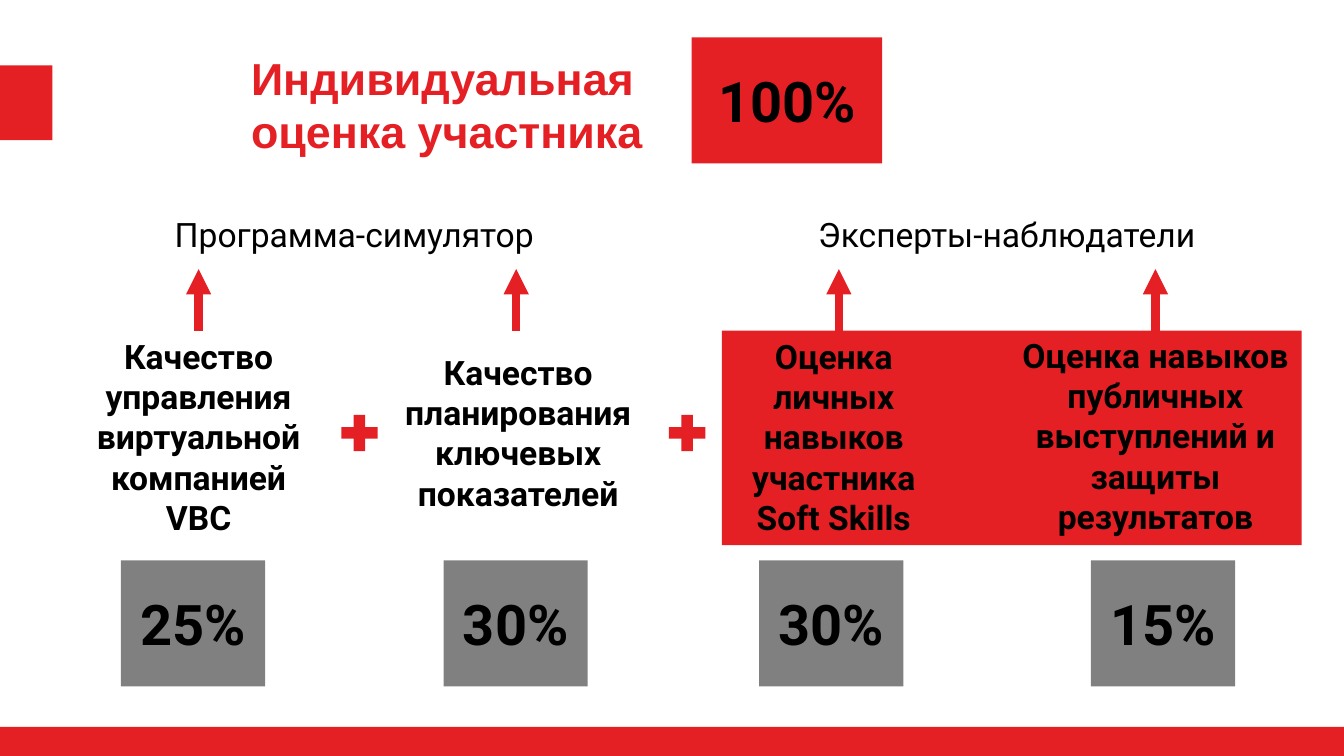
import pptx
import pptx.dml.color
import pptx.enum.shapes
import pptx.enum.text
import pptx.oxml.ns
import pptx.util
from lxml import etree

Inches = pptx.util.Inches
Pt = pptx.util.Pt
Shape = pptx.enum.shapes.MSO_SHAPE
Align = pptx.enum.text.PP_ALIGN

RED = pptx.dml.color.RGBColor(0xE4, 0x20, 0x25)
GRAY = pptx.dml.color.RGBColor(0x80, 0x80, 0x80)
BLACK = pptx.dml.color.RGBColor(0, 0, 0)


class SlideBuilder:
    heading_font = "Arial"
    body_font = "Roboto"

    def __init__(self, page):
        self.page = page

    def set_text(self, frame, paragraphs, size, bold, color, font, align):
        frame.word_wrap = True
        frame.vertical_anchor = pptx.enum.text.MSO_ANCHOR.TOP
        for index, lines in enumerate(paragraphs):
            para = frame.paragraphs[0] if index == 0 else frame.add_paragraph()
            para.alignment = align
            para.line_spacing = 1.0
            para.space_before = Pt(0)
            for number, line in enumerate(lines):
                if number:
                    para.add_line_break()
                span = para.add_run()
                span.text = line
                span.font.name = font
                span.font.size = Pt(size)
                span.font.bold = bold
                span.font.color.rgb = color

    def title(self, text, left, top, width, height):
        box = self.page.shapes.title
        box.left, box.top = Inches(left), Inches(top)
        box.width, box.height = Inches(width), Inches(height)
        box.text_frame.auto_size = pptx.enum.text.MSO_AUTO_SIZE.NONE
        self.set_text(box.text_frame, [[text]], 32, True, RED, self.heading_font, Align.LEFT)

    def text(self, paragraphs, left, top, width, height, size=24, bold=True):
        box = self.page.shapes.add_textbox(
            Inches(left), Inches(top), Inches(width), Inches(height))
        self.set_text(box.text_frame, paragraphs, size, bold, BLACK, self.body_font, Align.CENTER)

    def shape(self, left, top, width, height, color=RED, kind=Shape.RECTANGLE):
        block = self.page.shapes.add_shape(
            kind, Inches(left), Inches(top), Inches(width), Inches(height))
        block.shadow.inherit = False
        block.fill.solid()
        block.fill.fore_color.rgb = color
        block.line.fill.background()

    def percent(self, value, left, top, width, color):
        self.shape(left, top, width, 1.25, color)
        self.text([[value]], left, top + 0.24, width, 0.77, size=40)

    def up_arrow(self, x, bottom, top):
        arrow = self.page.shapes.add_connector(
            pptx.enum.shapes.MSO_CONNECTOR.STRAIGHT,
            Inches(x), Inches(bottom), Inches(x), Inches(top))
        arrow.line.color.rgb = RED
        arrow.line.width = Pt(6)
        qn = pptx.oxml.ns.qn
        properties = arrow._element.spPr
        etree.SubElement(properties.find(qn("a:ln")), qn("a:tailEnd"), type="triangle")
        etree.SubElement(properties, qn("a:effectLst"))


def main():
    deck = pptx.Presentation()
    deck.slide_width, deck.slide_height = Inches(13.33), Inches(7.5)
    slide = SlideBuilder(deck.slides.add_slide(deck.slide_layouts[5]))

    slide.title("Индивидуальная оценка участника", 2.39, 0.45, 4.38, 1.18)
    slide.shape(0, 7.21, 13.33, 0.29)
    slide.shape(0, 0.65, 0.52, 0.74)
    slide.shape(7.16, 3.28, 5.75, 2.13)
    slide.percent("100%", 6.86, 0.37, 1.89, RED)

    for source, left in (("Программа-симулятор", 1.38), ("Эксперты-наблюдатели", 7.85)):
        slide.text([[source]], left, 2.07, 4.27, 0.5, bold=False)

    for left in (3.32, 6.57):
        slide.shape(left, 4.05, 0.49, 0.49, kind=Shape.MATH_PLUS)

    criteria = [
        ([["Качество управления"], ["виртуальной компанией"], ["VBC"]],
         0.42, 3.28, 2.12, 1.97, "25%", 1.2),
        ([["Качество планирования ключевых показателей"]],
         3.59, 3.44, 1.72, 5.12, "30%", 4.4),
        ([["Оценка"], ["личных", "навыков участника", "Soft Skills"]],
         6.72, 3.28, 2.12, 8.32, "30%", 7.53),
        ([["Оценка навыков публичных выступлений и защиты результатов"]],
         9.91, 3.27, 2.12, 11.46, "15%", 10.82),
    ]
    for paragraphs, left, top, height, arrow_x, weight, weight_left in criteria:
        slide.text(paragraphs, left, top, 3.1, height)
        slide.up_arrow(arrow_x, 3.28, 2.67)
        slide.percent(weight, weight_left, 5.56, 1.43, GRAY)

    deck.save("out.pptx")


if __name__ == "__main__":
    main()
